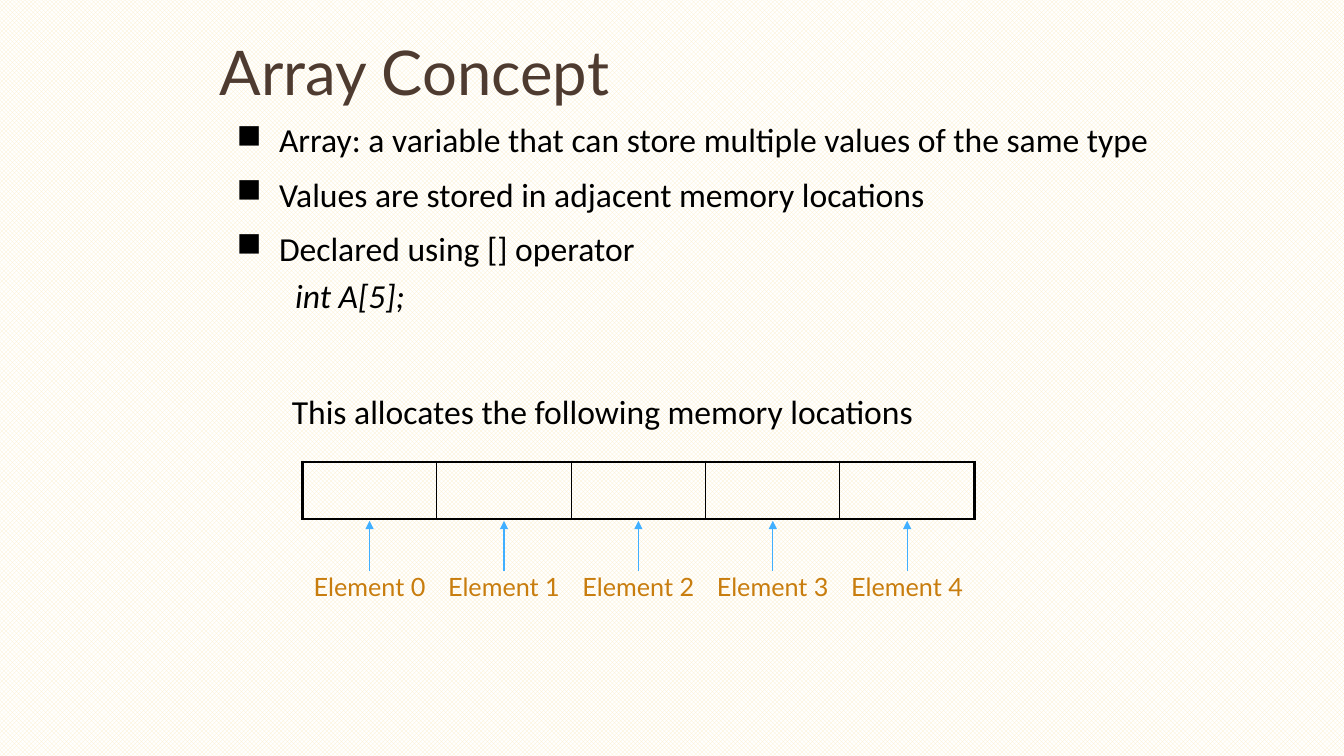
from pptx import Presentation
from pptx import util as u
from pptx.dml.color import RGBColor
from pptx.enum import dml, shapes, text
from pptx.oxml import parse_xml
from pptx.oxml.ns import nsdecls, qn

# Grid of 160 columns by 90 rows, twelve to the inch
COLUMNS, ROWS = 160, 90
UNIT = u.Inches(1) // 12
BLACK, BROWN, ORANGE, BLUE = "000000", "4E3B30", "C87D0E", "40AFFF"
ELEMENTS = 5
BULLETS = [
    "Array: a variable that can store multiple values of the same type",
    "Values are stored in adjacent memory locations",
    "Declared using [] operator",
]


def color(value):
    return RGBColor.from_string(value)


def grid(*lengths):
    return [u.Emu(round(length * UNIT)) for length in lengths]


def xml(tag, attributes="", content=""):
    return parse_xml(f'<a:{tag} {nsdecls("a")} {attributes}>{content}</a:{tag}>')


def format_runs(paragraph, size, font, hex_color, italic=False):
    for run in paragraph.runs:
        run.font.size = u.Pt(size)
        run.font.name = font
        run.font.italic = italic
        run.font.color.rgb = color(hex_color)


def indent(paragraph, left, first=0):
    properties = paragraph._p.get_or_add_pPr()
    properties.set("marL", str(u.Inches(left)))
    properties.set("indent", str(u.Inches(first)))
    return properties


def add_text_frame(slide, box, anchor=text.MSO_ANCHOR.TOP):
    frame = slide.shapes.add_textbox(*grid(*box)).text_frame
    frame.word_wrap = True
    frame.vertical_anchor = anchor
    return frame


def add_title(slide, box):
    frame = add_text_frame(slide, box, text.MSO_ANCHOR.MIDDLE)
    frame.text = "Array Concept"
    paragraph = frame.paragraphs[0]
    paragraph.line_spacing = 0.89
    format_runs(paragraph, 44, "Lato", BROWN)


def add_body(slide, box):
    frame = add_text_frame(slide, box)
    frame.text = "\n".join(BULLETS + ["int A[5];"])
    for index, paragraph in enumerate(frame.paragraphs):
        is_code = index == len(BULLETS)
        paragraph.line_spacing = 0.94
        paragraph.space_after = u.Pt(2)
        if index:
            paragraph.space_before = u.Pt(5 if is_code else 9.6)
        format_runs(paragraph, 24, "Calibri", BLACK, is_code)
        if is_code:
            paragraph.level = 1
            indent(paragraph, 1, -0.42)
        else:
            indent(paragraph, 0.42, -0.42).append(xml("buChar", 'char="■"'))


def add_note(slide, box):
    frame = add_text_frame(slide, box)
    frame.text = "This allocates the following memory locations"
    paragraph = frame.paragraphs[0]
    indent(paragraph, 0.38)
    format_runs(paragraph, 24, "Calibri", BLACK)


def set_borders(cell, widths):
    """Widths in points for left, right, top and bottom; 0 means no line."""
    properties = cell._tc.get_or_add_tcPr()
    for side, width in zip("LRTB", widths):
        fill = f'<a:solidFill><a:srgbClr val="{BLACK}"/></a:solidFill>' if width else "<a:noFill/>"
        properties.append(xml(f"ln{side}", f'w="{u.Pt(width)}"', fill))
    cell.fill.background()


def add_row(slide, box):
    """Add a one-row table of equal columns and return its cells."""
    table = slide.shapes.add_table(1, ELEMENTS, *grid(*box)).table
    table.first_row = table.horz_banding = False
    return [table.cell(0, index) for index in range(ELEMENTS)]


def add_memory(slide, box):
    last = ELEMENTS - 1
    for index, cell in enumerate(add_row(slide, box)):
        left = 2.25 if index == 0 else 1
        right = 2.25 if index == last else 1
        set_borders(cell, (left, right, 2.25, 2.25))


def add_labels(slide, box):
    for index, cell in enumerate(add_row(slide, box)):
        set_borders(cell, (0, 0, 0, 0))
        cell.text = f"Element {index}"
        paragraph = cell.text_frame.paragraphs[0]
        paragraph.alignment = text.PP_ALIGN.CENTER
        paragraph.line_spacing = 0.85
        format_runs(paragraph, 18, "Lato", ORANGE)


def add_arrows(slide, box):
    left, top, width, height = box
    step = width / ELEMENTS
    for index in range(ELEMENTS):
        x = left + (index + 0.5) * step
        arrow = slide.shapes.add_connector(
            shapes.MSO_CONNECTOR.STRAIGHT, *grid(x, top + height, x, top))
        arrow.line.color.rgb = color(BLUE)
        arrow.line.width = u.Pt(0.75)
        properties = arrow._element.spPr
        properties.find(qn("a:ln")).append(xml("tailEnd", 'type="triangle"'))
        properties.append(xml("effectLst"))


def main():
    presentation = Presentation()
    presentation.slide_width, presentation.slide_height = grid(COLUMNS, ROWS)
    slide = presentation.slides.add_slide(presentation.slide_layouts[6])

    # Background
    background = slide.background.fill
    background.patterned()
    background.pattern = dml.MSO_PATTERN.TRELLIS
    background.fore_color.rgb = color("FBEEC9")
    background.back_color.rgb = color("FFFFFF")

    # Text
    add_title(slide, (25, 4, 109, 10))
    add_body(slide, (27, 14, 113, 46))
    add_note(slide, (29, 46, 107, 8))

    # Memory diagram
    add_memory(slide, (36, 55, 80, 6.8))
    add_labels(slide, (36, 68, 80, 11))
    add_arrows(slide, (36, 62, 80, 6))
    presentation.save("out.pptx")


if __name__ == "__main__":
    main()
